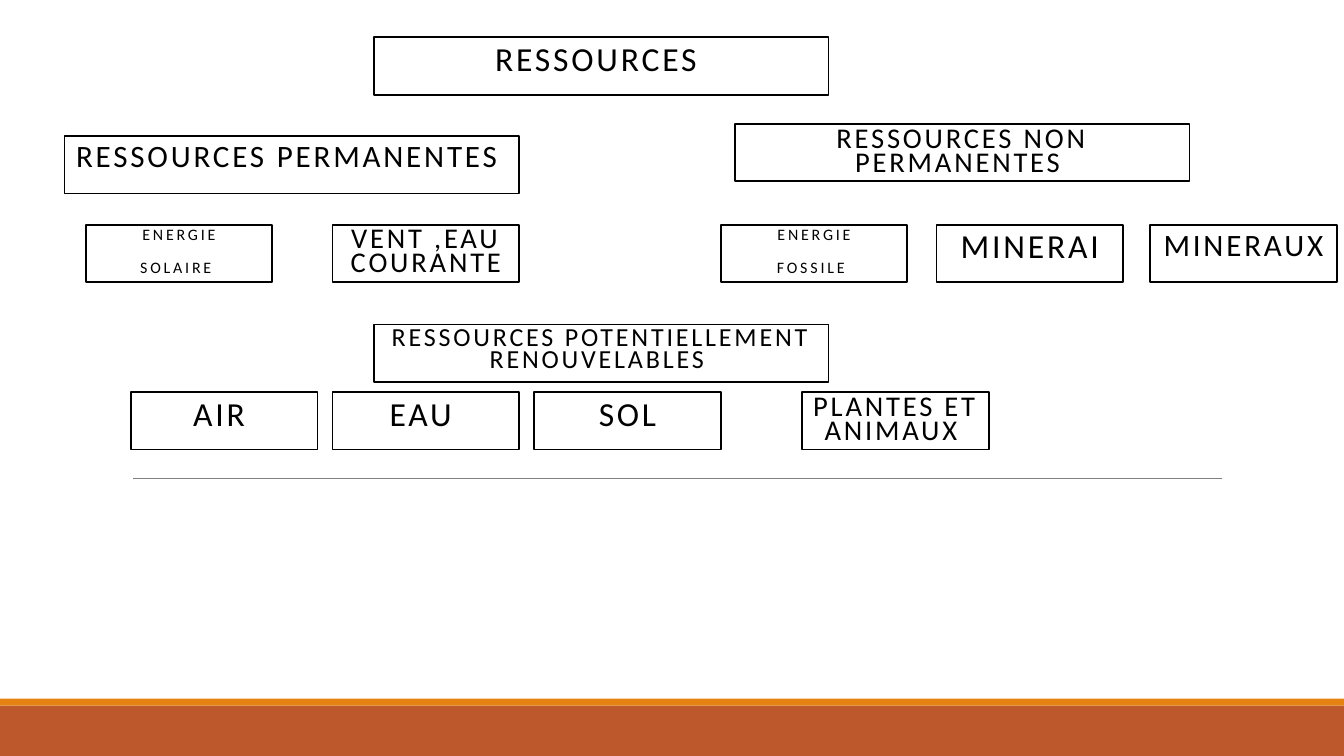
from dataclasses import dataclass

from lxml import etree
from pptx import Presentation
from pptx import util as u
from pptx.dml.color import RGBColor
from pptx.enum import shapes, text
from pptx.oxml.ns import qn

BLACK = RGBColor(0x00, 0x00, 0x00)
WHITE = RGBColor(0xFF, 0xFF, 0xFF)
GREY = RGBColor(0x80, 0x80, 0x80)
RUST = RGBColor(0xBD, 0x58, 0x2C)
ORANGE = RGBColor(0xE4, 0x83, 0x12)

SLIDE_W, SLIDE_H = u.Inches(13.33), u.Inches(7.5)
WIDE, NARROW, BOX_H = 33.83, 13.88, 7.6
LOOSE, TIGHT = 0.9, 0.7
TYPES_ROW, EXAMPLES_ROW, RENEWABLE_ROW = 29.73, 42.93, 51.87
RENEWABLE_LEFT, RENEWABLE_STEP = 9.75, 15


@dataclass(frozen=True)
class Band:
    top: float
    height: float
    color: RGBColor


@dataclass(frozen=True)
class Box:
    left: float
    top: float
    width: float
    lines: tuple[str, ...]
    size: float
    spacing: float = LOOSE


BANDS = [Band(93.33, 6.67, RUST), Band(92.4, 0.93, ORANGE)]

BOXES = [
    Box(27.82, 4.93, WIDE, ("RESSOURCES ",), 24),
    Box(4.8, 18, WIDE, ("RESSOURCES PERMANENTES ",), 22.2),
    Box(54.68, 16.4, WIDE, ("RESSOURCES NON PERMANENTES ",), 20.4, TIGHT),
    Box(6.38, TYPES_ROW, NARROW, ("ENERGIE", "SOLAIRE "), 11.4, TIGHT),
    Box(24.75, TYPES_ROW, NARROW, ("VENT ,EAU COURANTE",), 20.4, TIGHT),
    Box(53.63, TYPES_ROW, NARROW, ("ENERGIE", "FOSSILE "), 11.4, TIGHT),
    Box(69.68, TYPES_ROW, NARROW, ("MINERAI",), 24),
    Box(85.58, TYPES_ROW, NARROW, ("MINERAUX",), 22.2),
    Box(27.82, EXAMPLES_ROW, WIDE,
        ("RESSOURCES POTENTIELLEMENT RENOUVELABLES ",), 18.6, TIGHT),
    *(Box(RENEWABLE_LEFT + i * RENEWABLE_STEP, RENEWABLE_ROW, NARROW, (name,), 24)
      for i, name in enumerate(("AIR ", "EAU ", "SOL"))),
    Box(59.7, RENEWABLE_ROW, NARROW, ("PLANTES ET ANIMAUX ",), 20.4, TIGHT),
]


def across(share: float) -> int:
    return round(SLIDE_W * share / 100)


def down(share: float) -> int:
    return round(SLIDE_H * share / 100)


def apply(target, values: dict) -> None:
    for name, value in values.items():
        setattr(target, name, value)


def add_rect(s, left: float, top: float, width: float, height: float, color: RGBColor):
    sp = s.shapes.add_shape(shapes.MSO_SHAPE.RECTANGLE, across(left), down(top),
                            across(width), down(height))
    sp.shadow.inherit = False
    sp.fill.solid()
    sp.fill.fore_color.rgb = color
    return sp


def draw_band(s, band: Band) -> None:
    sp = add_rect(s, 0, band.top, 100, band.height, band.color)
    sp.line.fill.background()


def draw_rule(s, left: float, right: float, top: float) -> None:
    cx = s.shapes.add_connector(shapes.MSO_CONNECTOR.STRAIGHT, across(left), down(top),
                                across(right), down(top))
    cx.line.color.rgb = GREY
    cx.line.width = u.Pt(0.5)
    etree.SubElement(cx._element.spPr, qn("a:effectLst"))


def draw_box(s, box: Box) -> None:
    sp = add_rect(s, box.left, box.top, box.width, BOX_H, WHITE)
    sp.line.color.rgb = BLACK
    sp.line.width = u.Pt(1.25)
    tf = sp.text_frame
    apply(tf, {"word_wrap": True, "vertical_anchor": text.MSO_ANCHOR.TOP})
    for i, line in enumerate(box.lines):
        p = tf.add_paragraph() if i else tf.paragraphs[0]
        apply(p, {"alignment": text.PP_ALIGN.CENTER, "line_spacing": box.spacing,
                  "space_before": u.Pt(12), "space_after": u.Pt(2)})
        r = p.add_run()
        r.text = line
        apply(r.font, {"name": "Calibri", "size": u.Pt(box.size)})
        r.font.color.rgb = BLACK
        r._r.get_or_add_rPr().set("spc", "200")


def main() -> None:
    prs = Presentation()
    apply(prs, {"slide_width": SLIDE_W, "slide_height": SLIDE_H})
    s = prs.slides.add_slide(prs.slide_layouts[6])
    for band in BANDS:
        draw_band(s, band)
    draw_rule(s, 9.9, 90.9, 63.33)
    for box in BOXES:
        draw_box(s, box)
    prs.save("out.pptx")


if __name__ == "__main__":
    main()
